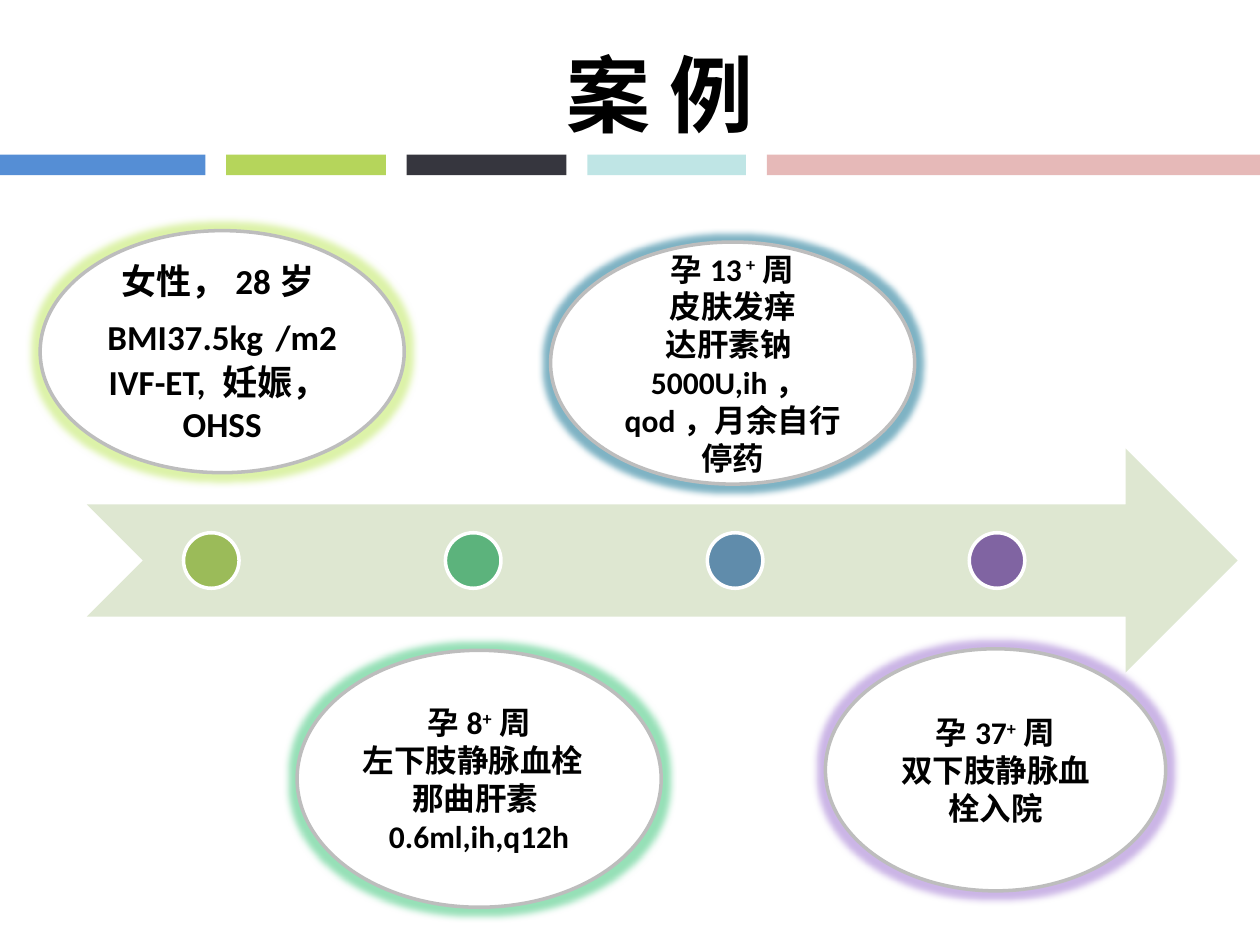
import pptx
import pptx.dml.color
import pptx.enum.shapes
import pptx.enum.text
import pptx.oxml
import pptx.oxml.ns
import pptx.util

Cm, Pt = pptx.util.Cm, pptx.util.Pt
SHAPES = pptx.enum.shapes.MSO_SHAPE
ALIGN = pptx.enum.text.PP_ALIGN
ANCHOR = pptx.enum.text.MSO_ANCHOR

# Content: all lengths in cm
SLIDE_WIDTH, SLIDE_HEIGHT = 25.4, 19.05
TITLE = "案 例"
BARS = [("558ED5", 4.14), ("B5D55B", 3.22), ("36363E", 3.22),
        ("BFE5E5", 3.2), ("E6B9B8", 9.94)]
BAR_TOP, BAR_HEIGHT, BAR_GAP = 3.12, 0.41, 0.42
ARROW = (1.75, 9.04, 23.2, 4.52)
DOT_COLORS = ["9BBB59", "5CB37C", "608CAB", "8064A2"]
DOT_LEFT, DOT_PITCH, DOT_SIZE = 3.7, 5.28, 1.12

# Each paragraph is an alignment and its runs: text with format changes
CENTER, LEFT = ALIGN.CENTER, ALIGN.LEFT
RAISED = {"baseline": 30}
BUBBLES = [
    {"box": (11.1, 4.88, 7.34, 4.88), "glow": "7FB3C4", "radius": 7, "size": 18,
     "paragraphs": [
         (CENTER, [("孕13", {}), (" +", RAISED), ("周", {})]),
         (CENTER, [("皮肤发痒", {})]),
         (CENTER, [("达肝素钠5000U,ih，qod，月余自行停药", {})])]},
    {"box": (5.99, 13.11, 7.34, 5.18), "glow": "96E0B7", "radius": 8, "size": 18,
     "paragraphs": [
         (CENTER, [("孕8", {}), ("+", RAISED), ("周", {})]),
         (LEFT, [("左下肢静脉血栓", {})]),
         (CENTER, [("那曲肝素0.6ml,ih,q12h", {})])]},
    {"box": (16.64, 13.08, 6.86, 4.88), "glow": "CBB5E6", "radius": 8, "size": 18,
     "paragraphs": [
         (CENTER, [("孕37", {}), ("+", RAISED), ("周", {})]),
         (CENTER, [("双下肢静脉血栓入院", {})])]},
    {"box": (0.81, 4.65, 7.34, 4.88), "glow": "DCF2A8", "radius": 8, "size": 20,
     "paragraphs": [
         (CENTER, [("女性，28岁BMI37.5kg", {}),
                   (" ", {"size": 28, "font": "Times New Roman", "bold": False}),
                   ("/m2 IVF-ET, 妊娠，OHSS", {})])]},
]


def color(value):
    return pptx.dml.color.RGBColor.from_string(value)


def add_run(paragraph, text, size=18, font="Calibri", bold=True,
            fill="000000", baseline=0):
    run = paragraph.add_run()
    run.text = text
    run.font.size, run.font.bold = Pt(size), bold
    run.font.color.rgb = color(fill)
    run.font.name = font
    properties = run.font._element
    east_asian = pptx.oxml.parse_xml(
        f'<a:ea {pptx.oxml.ns.nsdecls("a")} typeface="{font}"/>')
    properties.find(pptx.oxml.ns.qn("a:latin")).addnext(east_asian)
    if baseline:
        properties.set("baseline", str(baseline * 1000))


def add_shape(slide, kind, box, fill, line=None):
    shape = slide.shapes.add_shape(kind, *map(Cm, box))
    shape.shadow.inherit = False
    shape.fill.solid()
    shape.fill.fore_color.rgb = color(fill)
    if line:
        shape.line.color.rgb = color(line)
        shape.line.width = Pt(2)
    else:
        shape.line.fill.background()
    return shape


def add_glow(shape, value, radius):
    effects = shape._element.spPr.find(pptx.oxml.ns.qn("a:effectLst"))
    effects.append(pptx.oxml.parse_xml(
        f'<a:glow {pptx.oxml.ns.nsdecls("a")} rad="{Pt(radius)}">'
        f'<a:srgbClr val="{value}"/></a:glow>'))


def add_bubble(slide, bubble):
    shape = add_shape(slide, SHAPES.OVAL, bubble["box"], "FFFFFF", "BDBDBD")
    add_glow(shape, bubble["glow"], bubble["radius"])
    frame = shape.text_frame
    frame.word_wrap = True
    frame.vertical_anchor = ANCHOR.MIDDLE
    for index, (alignment, runs) in enumerate(bubble["paragraphs"]):
        paragraph = frame.add_paragraph() if index else frame.paragraphs[0]
        paragraph.alignment = alignment
        for text, changes in runs:
            add_run(paragraph, text, **{"size": bubble["size"], **changes})


def main():
    presentation = pptx.Presentation()
    presentation.slide_width = Cm(SLIDE_WIDTH)
    presentation.slide_height = Cm(SLIDE_HEIGHT)
    slide = presentation.slides.add_slide(presentation.slide_layouts[6])

    # Colour bars under the title
    left = 0
    for fill, width in BARS:
        add_shape(slide, SHAPES.RECTANGLE, (left, BAR_TOP, width, BAR_HEIGHT), fill)
        left += width + BAR_GAP

    # Title
    title = slide.shapes.add_textbox(Cm(4.5), Cm(0.74), Cm(17.6), Cm(2.31))
    title.text_frame.word_wrap = True
    paragraph = title.text_frame.paragraphs[0]
    paragraph.alignment = CENTER
    add_run(paragraph, TITLE, size=48, font="Noto Sans CJK SC")

    # Timeline arrow with its dots
    add_shape(slide, SHAPES.NOTCHED_RIGHT_ARROW, ARROW, "DEE7D1")
    dot_top = ARROW[1] + (ARROW[3] - DOT_SIZE) / 2
    for index, fill in enumerate(DOT_COLORS):
        box = (DOT_LEFT + index * DOT_PITCH, dot_top, DOT_SIZE, DOT_SIZE)
        add_shape(slide, SHAPES.OVAL, box, fill, "FFFFFF")

    # Case events
    for bubble in BUBBLES:
        add_bubble(slide, bubble)

    presentation.save("out.pptx")


if __name__ == "__main__":
    main()
